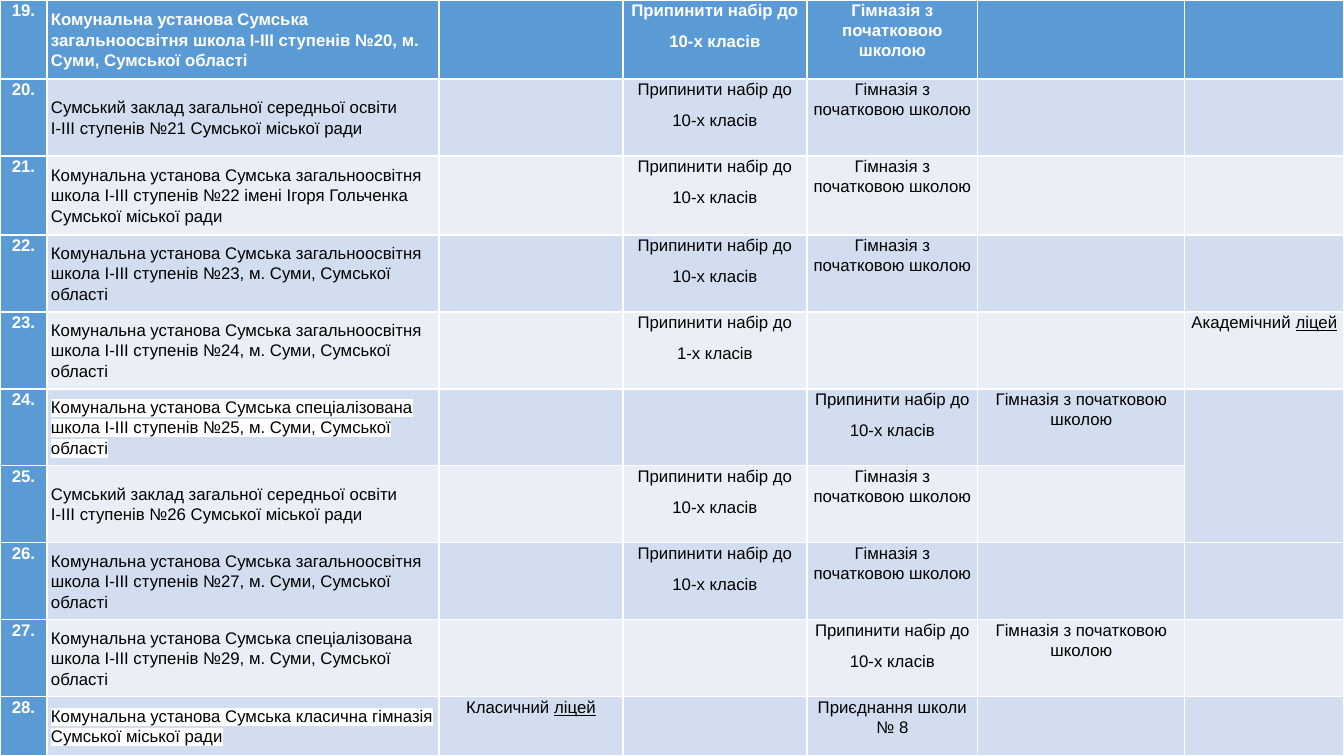
"""Builds a slide with a table of planned changes for Sumy schools 19 to 28."""
from lxml import etree
from pptx import Presentation
from pptx.dml.color import RGBColor
from pptx.enum.text import MSO_ANCHOR, PP_ALIGN
from pptx.oxml.ns import qn
from pptx.util import Pt

PX = 914400 / 100.8
CENTER, LEFT = PP_ALIGN.CENTER, PP_ALIGN.LEFT
TOP, MIDDLE = MSO_ANCHOR.TOP, MSO_ANCHOR.MIDDLE
BLUE = RGBColor(0x5B, 0x9B, 0xD5)
BAND_DARK = RGBColor(0xD2, 0xDE, 0xEF)
BAND_LIGHT = RGBColor(0xEA, 0xEF, 0xF7)
WHITE = RGBColor(0xFF, 0xFF, 0xFF)
BLACK = RGBColor(0, 0, 0)

COLUMN_WIDTHS = [47, 392, 184, 184, 171, 207, 159]
ROW_HEIGHTS = [79, 77, 79, 77, 77, 77, 77, 77, 77, 59]
FIRST_NUMBER = 19
UNDERLINED = "ліцей"
HIGHLIGHTED_ROWS = (5, 9)

STOP_10 = "Припинити набір до\n10-х класів"
STOP_1 = "Припинити набір до\n1-х класів"
GYMNASIUM = "Гімназія з початковою школою"
STOP_AND_GYMNASIUM = {3: STOP_10, 4: GYMNASIUM}
STOP_AND_GYMNASIUM_LATER = {4: STOP_10, 5: GYMNASIUM}

SCHOOLS = [
    ("Комунальна установа Сумська загальноосвітня школа І-ІІІ ступенів №20, м. Суми, Сумської області",
     STOP_AND_GYMNASIUM),
    ("Сумський заклад загальної середньої освіти\vІ-ІІІ ступенів №21 Сумської міської ради",
     STOP_AND_GYMNASIUM),
    ("Комунальна установа Сумська загальноосвітня школа І-ІІІ ступенів №22 імені Ігоря Гольченка "
     "Сумської міської ради", STOP_AND_GYMNASIUM),
    ("Комунальна установа Сумська загальноосвітня школа І-ІІІ ступенів №23, м. Суми, Сумської області",
     STOP_AND_GYMNASIUM),
    ("Комунальна установа Сумська загальноосвітня школа І-ІІІ ступенів №24, м. Суми, Сумської області",
     {3: STOP_1, 6: "Академічний ліцей"}),
    ("Комунальна установа Сумська спеціалізована школа І-ІІІ ступенів №25, м. Суми, Сумської області",
     STOP_AND_GYMNASIUM_LATER),
    ("Сумський заклад загальної середньої освіти\vІ-ІІІ ступенів №26 Сумської міської ради",
     STOP_AND_GYMNASIUM),
    ("Комунальна установа Сумська загальноосвітня школа І-ІІІ ступенів №27, м. Суми, Сумської області",
     STOP_AND_GYMNASIUM),
    ("Комунальна установа Сумська спеціалізована школа І-ІІІ ступенів №29, м. Суми, Сумської області",
     STOP_AND_GYMNASIUM_LATER),
    ("Комунальна установа Сумська класична гімназія Сумської міської ради",
     {2: "Класичний ліцей", 4: "Приєднання школи № 8"}),
]


def px(length):
    return round(length * PX)


def write_cell(cell, text, align, anchor, color, bold):
    cell.vertical_anchor = anchor
    cell.margin_left = cell.margin_right = px(4)
    cell.margin_top = cell.margin_bottom = 0
    for index, line in enumerate(text.split("\n")):
        paragraph = cell.text_frame.paragraphs[0] if index == 0 else cell.text_frame.add_paragraph()
        if line.endswith(UNDERLINED):
            paragraph.add_run().text = line.removesuffix(UNDERLINED)
            lyceum = paragraph.add_run()
            lyceum.text = UNDERLINED
            lyceum.font.underline = True
        else:
            paragraph.text = line
        paragraph.alignment = align
        paragraph.line_spacing = 1.07
        paragraph.space_after = Pt(8)
        paragraph.font.name = "Arial"
        paragraph.font.size = Pt(12)
        paragraph.font.bold = bold
        paragraph.font.color.rgb = color


prs = Presentation()
prs.slide_width, prs.slide_height = px(1344), px(756)
slide = prs.slides.add_slide(prs.slide_layouts[6])

plan = slide.shapes.add_table(len(SCHOOLS), len(COLUMN_WIDTHS), 0, 0, px(1344), px(756)).table
plan.first_row = plan.first_col = True
plan.horz_banding = False
for column, width in zip(plan.columns, COLUMN_WIDTHS):
    column.width = px(width)
for row, height in zip(plan.rows, ROW_HEIGHTS):
    row.height = px(height)

for row_index, (school, changes) in enumerate(SCHOOLS):
    header = row_index == 0
    band = BLUE if header else BAND_DARK if row_index % 2 else BAND_LIGHT
    texts = {0: f"{FIRST_NUMBER + row_index}.", 1: school, **changes}
    for column_index in range(len(COLUMN_WIDTHS)):
        cell = plan.cell(row_index, column_index)
        strong = header or column_index == 0
        cell.fill.solid()
        cell.fill.fore_color.rgb = BLUE if strong else band
        if column_index in texts:
            is_school = column_index == 1
            write_cell(cell, texts[column_index], LEFT if is_school else CENTER,
                       MIDDLE if is_school else TOP, WHITE if strong else BLACK, strong)

for row_index in HIGHLIGHTED_ROWS:
    name_run = plan.cell(row_index, 1).text_frame.paragraphs[0].runs[0]
    highlight = etree.SubElement(name_run.font._element, qn("a:highlight"))
    etree.SubElement(highlight, qn("a:srgbClr"), val=str(WHITE))

plan.cell(5, 6).merge(plan.cell(6, 6))

prs.save("out.pptx")
